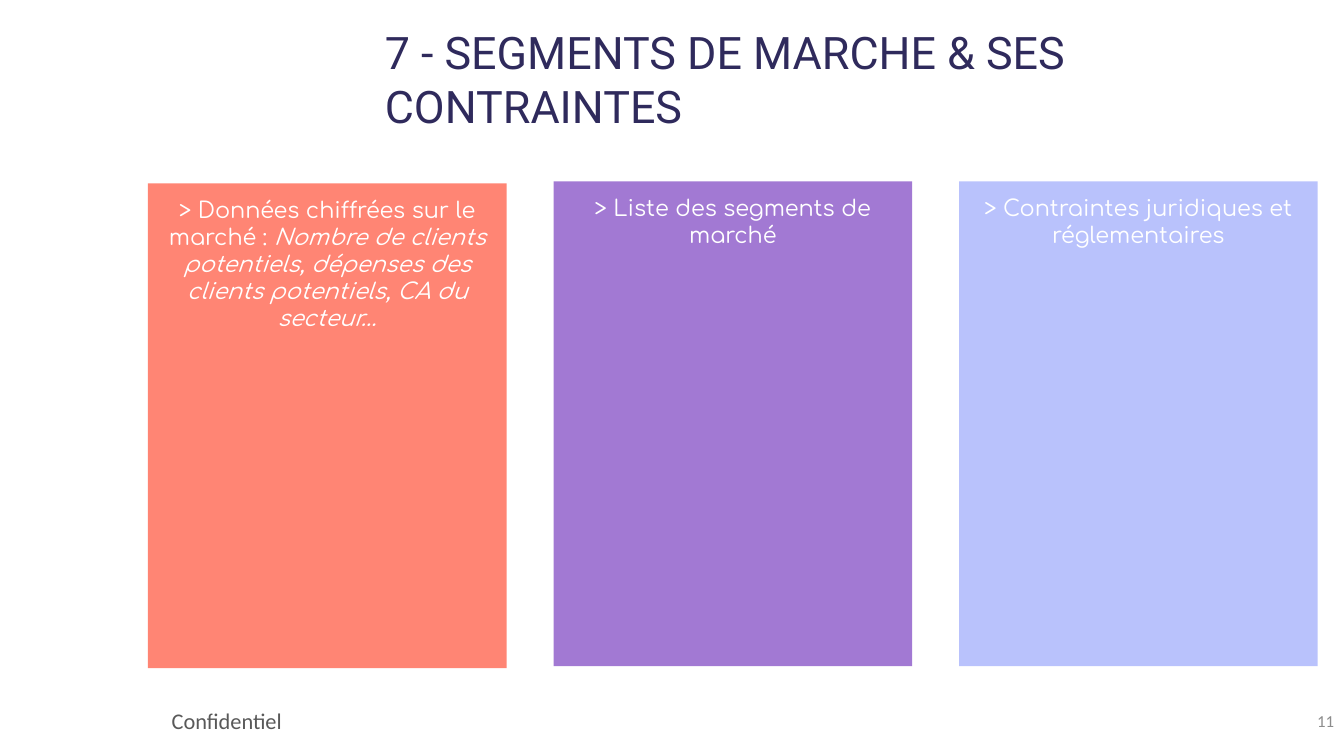
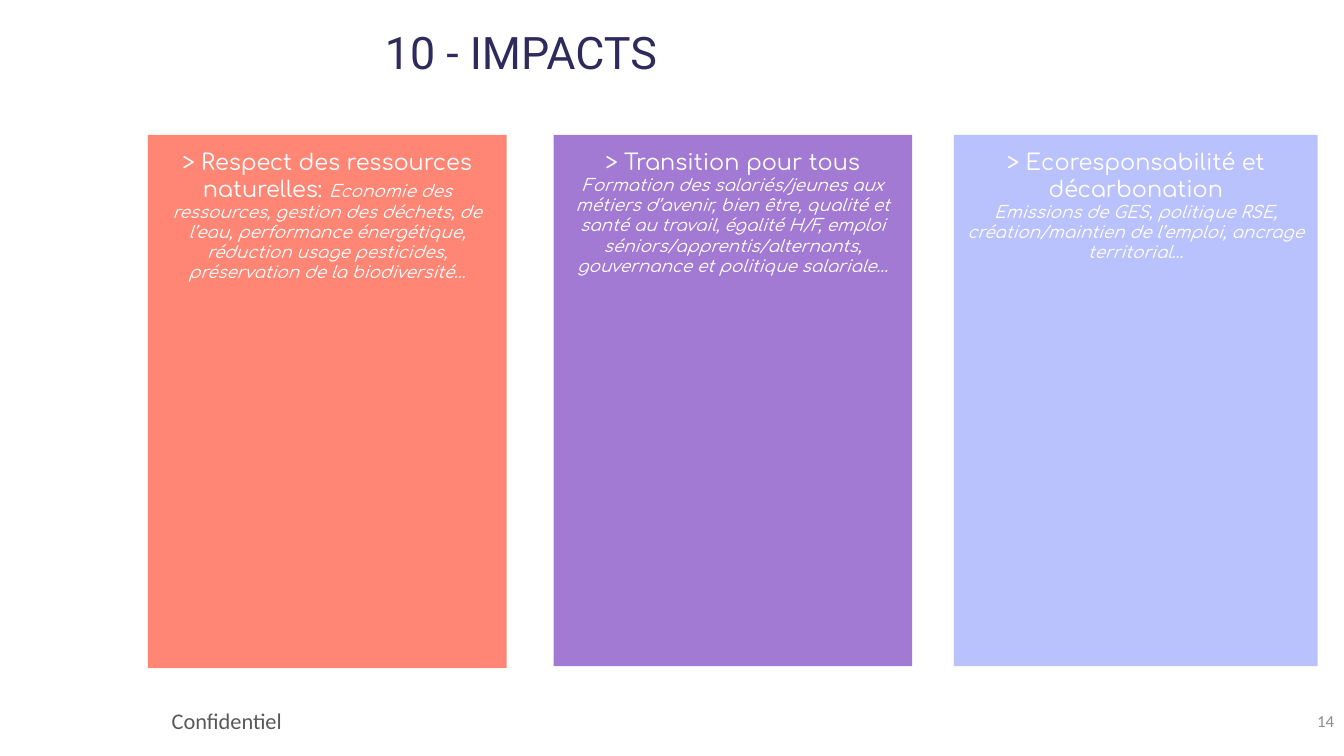
from dataclasses import dataclass

from pptx import Presentation
from pptx.dml.color import RGBColor
from pptx.enum.shapes import MSO_SHAPE as Shape
from pptx.enum.text import MSO_ANCHOR as Anchor, PP_ALIGN as Align
from pptx.util import Cm, Pt


@dataclass(frozen=True)
class TextStyle:
    font: str
    size: int
    color: str
    italic: bool = False


class Theme:
    width, height = 33.87, 19.05
    card_fills = ("FF8574", "A279D3", "B9C2FC")
    title = TextStyle("Roboto", 32, "2F2A5C")
    heading = TextStyle("Comfortaa", 16, "FFFFFF")
    example = TextStyle("Comfortaa", 16, "FFFFFF", italic=True)
    detail = TextStyle("Comfortaa", 12, "FFFFFF", italic=True)
    footer = TextStyle("Calibri", 16, "595959")
    number = TextStyle("Calibri", 12, "8C8C8C")


CARD_LEFT, CARD_WIDTH, CARD_PITCH = 3.73, 9.04, 10.22
CARD_BOTTOMS = (16.84, 16.79, 16.79)
CARD_INSET, TITLE_INSET = 0.33, 0.25
TITLE_LEFT = 9.45
FOOTER_TOP, FOOTER_HEIGHT = 17.65, 1.02
NUMBER_WIDTH = 7.62


@dataclass(frozen=True)
class Card:
    """Paragraphs are lists of (text, style); widen moves the left edge outwards."""
    top: float
    paragraphs: list
    widen: float = 0


def set_insets(frame, inset):
    frame.margin_left = frame.margin_right = Cm(inset)
    frame.margin_top = frame.margin_bottom = Cm(inset)


def write_paragraphs(frame, paragraphs, align):
    for index, runs in enumerate(paragraphs):
        para = frame.add_paragraph() if index else frame.paragraphs[0]
        para.alignment = align
        for text, style in runs:
            span = para.add_run()
            span.text = text
            font = span.font
            font.name, font.size, font.italic = style.font, Pt(style.size), style.italic
            font.color.rgb = RGBColor.from_string(style.color)


def add_text(page, left, top, width, height, text, style,
             align=Align.LEFT, anchor=Anchor.MIDDLE, inset=None):
    box = page.shapes.add_textbox(Cm(left), Cm(top), Cm(width), Cm(height))
    frame = box.text_frame
    frame.word_wrap = True
    frame.vertical_anchor = anchor
    if inset is not None:
        set_insets(frame, inset)
    write_paragraphs(frame, [[(text, style)]], align)


def add_card(page, column, card):
    left = CARD_LEFT + column * CARD_PITCH - card.widen
    box = page.shapes.add_shape(
        Shape.RECTANGLE, Cm(left), Cm(card.top),
        Cm(CARD_WIDTH + card.widen), Cm(CARD_BOTTOMS[column] - card.top))
    box.shadow.inherit = False
    box.fill.solid()
    box.fill.fore_color.rgb = RGBColor.from_string(Theme.card_fills[column])
    box.line.fill.background()
    frame = box.text_frame
    frame.word_wrap = True
    frame.vertical_anchor = Anchor.TOP
    set_insets(frame, CARD_INSET)
    write_paragraphs(frame, card.paragraphs, Align.CENTER)


def add_page(deck, title, number, cards):
    page = deck.slides.add_slide(deck.slide_layouts[6])
    for column, card in enumerate(cards):
        add_card(page, column, card)
    add_text(page, TITLE_LEFT, 0.38, Theme.width - TITLE_LEFT, 1.93, title, Theme.title,
             anchor=Anchor.TOP, inset=TITLE_INSET)
    add_text(page, Theme.width - NUMBER_WIDTH, FOOTER_TOP, NUMBER_WIDTH, FOOTER_HEIGHT,
             str(number), Theme.number, Align.RIGHT)
    add_text(page, 0, FOOTER_TOP, 11.43, FOOTER_HEIGHT,
             "Confidentiel", Theme.footer, Align.CENTER)


def main():
    deck = Presentation()
    deck.slide_width, deck.slide_height = Cm(Theme.width), Cm(Theme.height)

    add_page(deck, "7 - SEGMENTS DE MARCHE & SES CONTRAINTES", 11, [
        Card(4.62, [[
            ("> Données chiffrées sur le marché : ", Theme.heading),
            ("Nombre de clients potentiels, dépenses des clients potentiels, "
             "CA du secteur…", Theme.example)]]),
        Card(4.57, [[("> Liste des segments de marché", Theme.heading)]]),
        Card(4.57, [[("> Contraintes juridiques et réglementaires", Theme.heading)]]),
    ])

    add_page(deck, "10 - IMPACTS", 14, [
        Card(3.4, [[
            ("> Respect des ressources naturelles: ", Theme.heading),
            ("Economie des ressources, gestion des déchets, de l’eau, performance "
             "énergétique, réduction usage pesticides, préservation de la "
             "biodiversité…", Theme.detail)]]),
        Card(3.4, [
            [("> Transition pour tous", Theme.heading)],
            [("Formation des salariés/jeunes aux métiers d’avenir, bien être, qualité "
              "et santé au travail, égalité H/F, emploi séniors/apprentis/alternants, "
              "gouvernance et politique salariale…", Theme.detail)]]),
        Card(3.4, [
            [("> Ecoresponsabilité et décarbonation", Theme.heading)],
            [("Emissions de GES, politique RSE, création/maintien de l’emploi, "
              "ancrage territorial…", Theme.detail)]], widen=0.13),
    ])

    deck.save("out.pptx")


if __name__ == "__main__":
    main()
